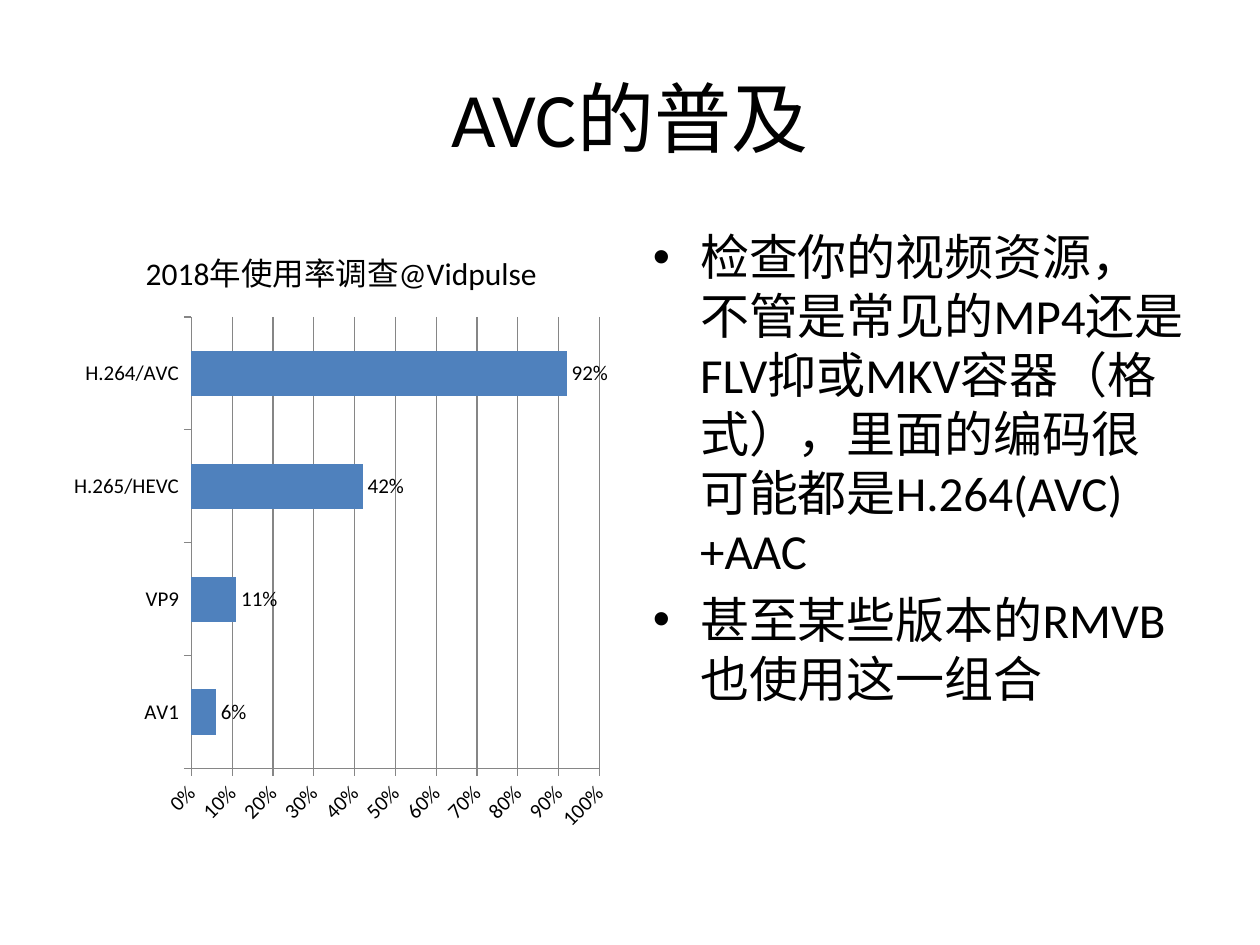
from lxml import etree
from pptx import Presentation
from pptx.chart.data import CategoryChartData
from pptx.dml.color import RGBColor
from pptx.enum.chart import XL_CHART_TYPE, XL_LABEL_POSITION, XL_TICK_MARK
from pptx.enum.text import MSO_ANCHOR, PP_ALIGN
from pptx.oxml.ns import qn
from pptx.util import Pt

BLACK = RGBColor(0x00, 0x00, 0x00)
BLUE = RGBColor(0x4F, 0x81, 0xBD)
GRAY = RGBColor(0x86, 0x86, 0x86)
FONT = "Calibri"

MARGIN, TOP = 36, 126
COL_W, COL_H = 318, 356.4
USAGE = {"AV1": 0.06, "VP9": 0.11, "H.265/HEVC": 0.42, "H.264/AVC": 0.92}
POINTS = [
    "检查你的视频资源，不管是常见的MP4还是FLV抑或MKV容器（格式），里面的编码很可能都是H.264(AVC)+AAC",
    "甚至某些版本的RMVB也使用这一组合",
]


def set_font(font, size):
    font.name = FONT
    font.size = Pt(size)
    font.bold = False
    font.color.rgb = BLACK


prs = Presentation()
prs.slide_width, prs.slide_height = Pt(720), Pt(540)
slide = prs.slides.add_slide(prs.slide_layouts[5])

title = slide.shapes.title
title.left, title.top, title.width, title.height = Pt(MARGIN), Pt(21.6), Pt(648), Pt(90)
tf = title.text_frame
tf.text = "AVC的普及"
tf.vertical_anchor = MSO_ANCHOR.MIDDLE
p = tf.paragraphs[0]
p.alignment = PP_ALIGN.CENTER
set_font(p.runs[0].font, 44)

data = CategoryChartData(number_format="0%")
data.categories = list(USAGE)
data.add_series("Series 1", list(USAGE.values()))
chart = slide.shapes.add_chart(
    XL_CHART_TYPE.BAR_CLUSTERED, Pt(MARGIN), Pt(TOP), Pt(COL_W), Pt(COL_H), data
).chart
set_font(chart.font, 18)
chart.has_legend = False
chart.has_title = True
chart.chart_title.include_in_layout = False
tf = chart.chart_title.text_frame
tf.text = "2018年使用率调查@Vidpulse"
set_font(tf.paragraphs[0].runs[0].font, 18)

plot = chart.plots[0]
plot.gap_width = 150
plot.vary_by_categories = False
bars = plot.series[0]
bars.format.fill.solid()
bars.format.fill.fore_color.rgb = BLUE
labels = bars.data_labels
labels.show_value = True
labels.position = XL_LABEL_POSITION.OUTSIDE_END
labels.number_format = "0%"
labels.number_format_is_linked = False
set_font(labels.font, 12)

for axis in (chart.category_axis, chart.value_axis):
    axis.major_tick_mark = XL_TICK_MARK.OUTSIDE
    axis.minor_tick_mark = XL_TICK_MARK.NONE
    axis.format.line.color.rgb = GRAY
    set_font(axis.tick_labels.font, 12)
axis = chart.value_axis
axis.minimum_scale, axis.maximum_scale, axis.major_unit = 0, 1, 0.1
axis.has_major_gridlines = True
axis.major_gridlines.format.line.color.rgb = GRAY
axis.tick_labels.number_format = "0%"
axis.tick_labels.number_format_is_linked = False

box = slide.shapes.add_textbox(Pt(720 - MARGIN - COL_W), Pt(TOP), Pt(COL_W), Pt(COL_H))
tf = box.text_frame
tf.word_wrap = True
for i, text in enumerate(POINTS):
    p = tf.add_paragraph() if i else tf.paragraphs[0]
    p.text = text
    p.space_before = Pt(5.6)
    set_font(p.runs[0].font, 28)
    pPr = p._p.get_or_add_pPr()
    pPr.set("marL", str(Pt(27)))
    pPr.set("indent", str(Pt(-27)))
    etree.SubElement(pPr, qn("a:buFont")).set("typeface", "Arial")
    etree.SubElement(pPr, qn("a:buChar")).set("char", "•")

prs.save("out.pptx")
